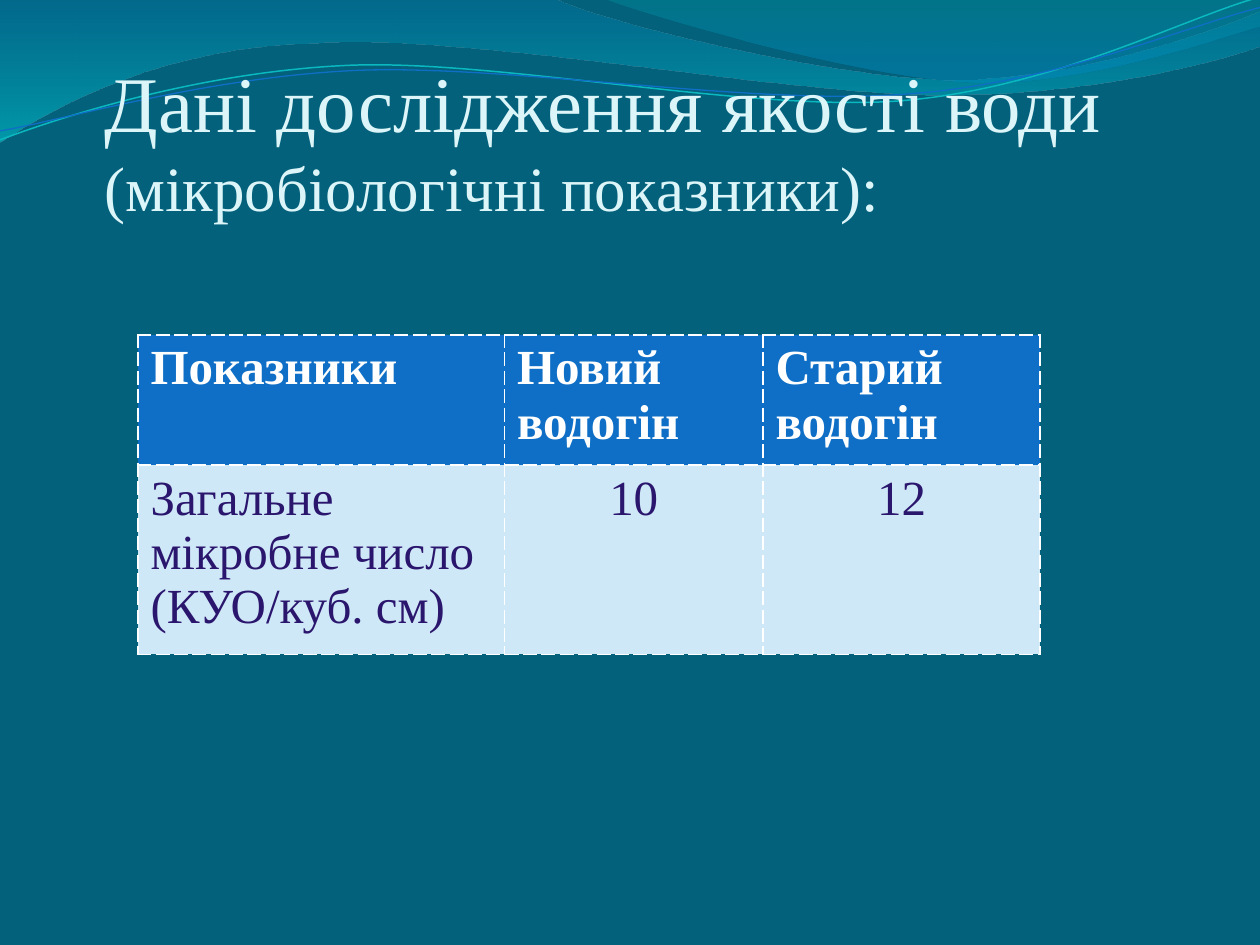
from dataclasses import dataclass

from lxml import etree
from pptx import Presentation
from pptx.dml.color import RGBColor
from pptx.enum.text import MSO_ANCHOR, PP_ALIGN
from pptx.oxml.ns import qn
from pptx.util import Cm, Pt

BOTTOM = MSO_ANCHOR.BOTTOM
LEFT, CENTER = PP_ALIGN.LEFT, PP_ALIGN.CENTER
UNITS_PER_CM = 1000


@dataclass(frozen=True)
class Theme:
    font: str = "Times New Roman"
    background: str = "04617B"
    title: str = "DBF5F9"
    header_fill: str = "0F6FC6"
    header_text: str = "FFFFFF"
    body_fill: str = "CFE8F8"
    body_text: str = "2B166E"
    border: str = "FFFFFF"
    title_size: float = 45
    subtitle_size: float = 36
    table_size: float = 28


@dataclass(frozen=True)
class Box:
    left: float
    top: float
    width: float
    height: float

    def place(self):
        return Cm(self.left), Cm(self.top), Cm(self.width), Cm(self.height)


THEME = Theme()

WAVE_FILLS = [
    ([(0, 0), (11.18, -0.03), (12.09, 0.43, 16.87, 1.6, 19.25, 1.6),
      (21.67, 1.6, 24.33, 0.66, 25.4, 0.23), (25.43, 0.91),
      (24.97, 1.12, 22.1, 1.93, 18.95, 1.91),
      (15.8, 1.91, 9.7, 0.71, 6.53, 0.86),
      (3.28, 0.91, 1.17, 2.11, -0.03, 2.87)],
     [(0, "0074A1", 45), (1, "00C6CF", 55)]),
    ([(12.17, -0.03), (12.93, 0.28, 17.32, 1.57, 19.53, 1.65),
      (21.74, 1.75, 24.41, 0.81, 25.4, 0.53), (25.4, 0)],
     [(0, "00A1A9", 30), (0.8, "008BBF", 45)]),
]
LINE_ROTATION = 357.3
WAVE_LINES = [
    ([(-0.05, 2.22), (1.19, 1.82, 4.02, 1.04, 7.05, 1.05),
      (10.05, 1.07, 15.02, 2.37, 18.08, 2.29),
      (21.13, 2.2, 23.86, 0.91, 25.41, 0.55)], "0AB8BF", 0.85),
    ([(-0.04, 2.04), (1.16, 1.9, 4.17, 1.15, 7.2, 1.16),
      (10.25, 1.18, 15.13, 2.25, 18.19, 2.16),
      (21.21, 2.1, 23.93, 1.06, 25.45, 0.75)], "0F6FC6", 0.75),
]

COLUMN_WIDTHS = [7.39, 5.21, 5.59]
ROW_HEIGHTS = [1.04, 1.35]
TABLE_ROWS = [
    ["Показники", "Новий водогін", "Старий водогін"],
    ["Загальне мікробне число (КУО/куб. см)", "10", "12"],
]


def color(value):
    return RGBColor.from_string(value)


def style(span, size, text_color, bold=False):
    span.font.name = THEME.font
    span.font.size = Pt(size)
    span.font.color.rgb = color(text_color)
    span.font.bold = bold


def add_outline(shapes, box, steps, close):
    curves = [[((box.left + x) * UNITS_PER_CM, (box.top + y) * UNITS_PER_CM)
               for x, y in zip(step[::2], step[1::2])] for step in steps]
    anchors = [curve[-1] for curve in curves]
    left, top = (min(values) for values in zip(*anchors))
    builder = shapes.build_freeform(*anchors[0], scale=Cm(1) / UNITS_PER_CM)
    builder.add_line_segments(anchors[1:], close=close)
    shape = builder.convert_to_shape()
    shape.shadow.inherit = False
    for segment, curve in zip(shape.element.xpath(".//a:lnTo"), curves[1:]):
        if len(curve) == 3:
            bezier = etree.Element(qn("a:cubicBezTo"))
            for x, y in curve:
                etree.SubElement(bezier, qn("a:pt"), x=str(round(x - left)), y=str(round(y - top)))
            segment.getparent().replace(segment, bezier)
    return shape


def add_waves(page, box):
    for steps, stops in WAVE_FILLS:
        wave = add_outline(page.shapes, box, steps, True)
        wave.line.fill.background()
        wave.fill.gradient()
        wave.fill.gradient_angle = 270
        for stop, (position, stop_color, _) in zip(wave.fill.gradient_stops, stops):
            stop.position = position
            stop.color.rgb = color(stop_color)
        colors = wave.element.xpath(".//a:gradFill//a:srgbClr")
        for element, (_, _, opacity) in zip(colors, stops):
            etree.SubElement(element, qn("a:alpha"), val=str(opacity * 1000))
    group = page.shapes.add_group_shape()
    for steps, line_color, width in WAVE_LINES:
        wave = add_outline(group.shapes, box, steps, False)
        wave.rotation = LINE_ROTATION
        wave.fill.background()
        wave.line.color.rgb = color(line_color)
        wave.line.width = Pt(width)


def add_title(page, box):
    frame = page.shapes.add_textbox(*box.place()).text_frame
    frame.word_wrap = True
    frame.vertical_anchor = BOTTOM
    frame.margin_left = frame.margin_right = frame.margin_bottom = 0
    frame.margin_top = Cm(0.13)
    para = frame.paragraphs[0]
    for text, size in (("Дані дослідження якості води ", THEME.title_size),
                       ("(мікробіологічні показники):", THEME.subtitle_size)):
        span = para.add_run()
        span.text = text
        style(span, size, THEME.title)


def add_borders(cell):
    properties = cell._tc.get_or_add_tcPr()
    for side in ("a:lnL", "a:lnR", "a:lnT", "a:lnB"):
        line = etree.SubElement(properties, qn(side), w=str(Pt(1)))
        fill = etree.SubElement(line, qn("a:solidFill"))
        etree.SubElement(fill, qn("a:srgbClr"), val=THEME.border)
        etree.SubElement(line, qn("a:prstDash"), val="sysDash")


def add_results(page, box):
    frame = page.shapes.add_table(len(TABLE_ROWS), len(COLUMN_WIDTHS), *box.place())
    table = frame.table
    for column, width in zip(table.columns, COLUMN_WIDTHS):
        column.width = Cm(width)
    for row, height in zip(table.rows, ROW_HEIGHTS):
        row.height = Cm(height)
    frame.height = Cm(box.height)
    for row_index, texts in enumerate(TABLE_ROWS):
        header = row_index == 0
        for column_index, text in enumerate(texts):
            cell = table.cell(row_index, column_index)
            add_borders(cell)
            cell.fill.solid()
            cell.fill.fore_color.rgb = color(THEME.header_fill if header else THEME.body_fill)
            para = cell.text_frame.paragraphs[0]
            para.text = text
            para.alignment = LEFT if header or column_index == 0 else CENTER
            style(para.runs[0], THEME.table_size,
                  THEME.header_text if header else THEME.body_text, header)


def main():
    deck = Presentation()
    deck.slide_width, deck.slide_height = Cm(25.4), Cm(19.05)
    page = deck.slides.add_slide(deck.slide_layouts[6])
    page.background.fill.solid()
    page.background.fill.fore_color.rgb = color(THEME.background)
    add_waves(page, Box(0, 0, 25.4, 2.87))
    add_title(page, Box(2.11, 0.91, 22.12, 3.61))
    add_results(page, Box(2.78, 6.75, sum(COLUMN_WIDTHS), 6.43))
    deck.save("out.pptx")


if __name__ == "__main__":
    main()
